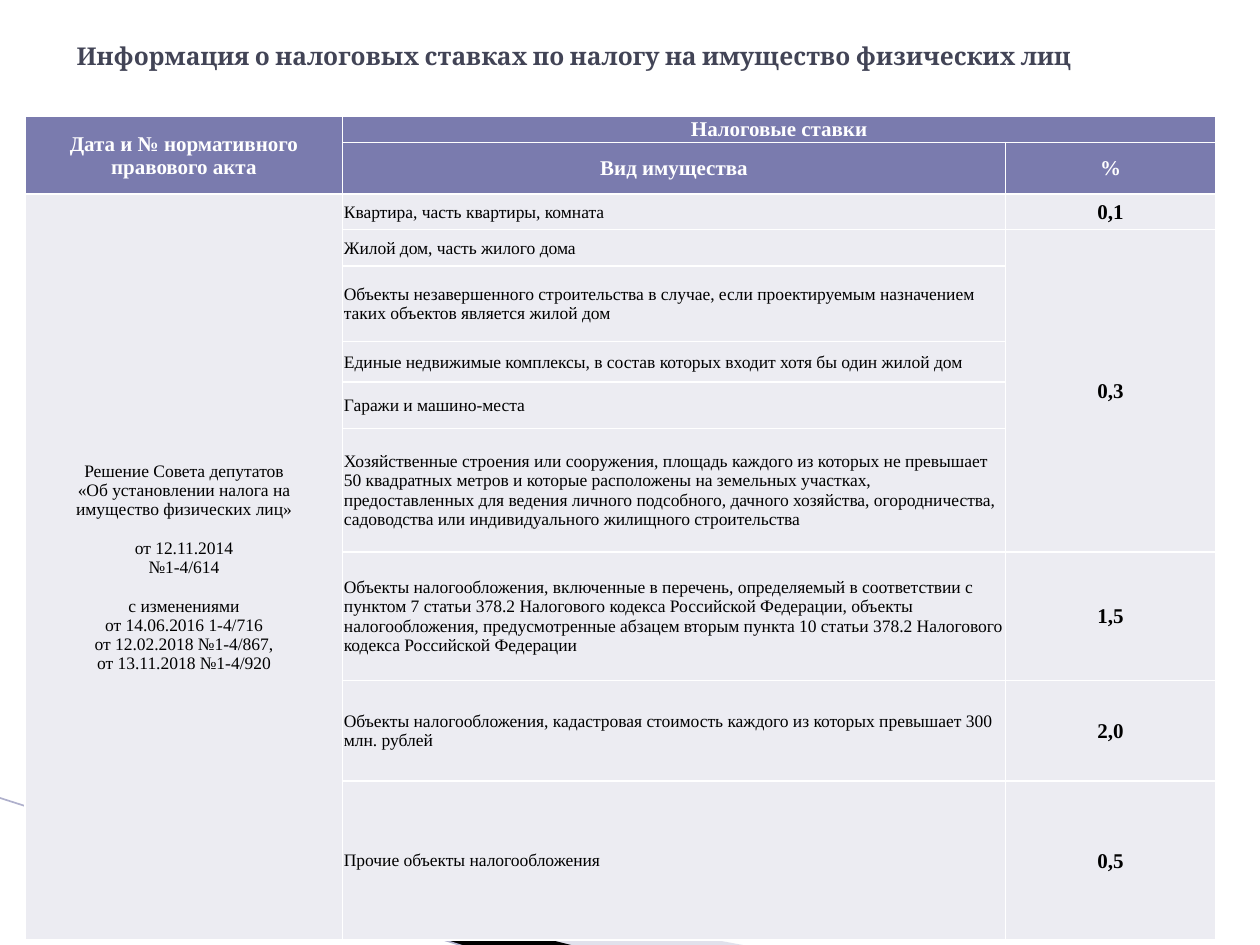
from lxml import etree
from pptx import Presentation
from pptx import util as u
from pptx.dml.color import RGBColor
from pptx.enum import shapes, text
from pptx.oxml import ns

COLS, ROWS = 100, 75  # grid over the slide


def rgb(hue):
    return RGBColor.from_string(hue)


def sub(node, tag, **attrs):
    return etree.SubElement(node, ns.qn(tag), attrs)


class Deck:
    serif, head = "Times New Roman", "Cambria"
    dark, band, pale = "424456", "7A7BAE", "ECECF2"

    def __init__(self):
        self.prs = Presentation()
        self.prs.slide_width, self.prs.slide_height = u.Inches(10), u.Inches(7.5)
        self.slide = self.prs.slides.add_slide(self.prs.slide_layouts[6])
        self.shapes = self.slide.shapes

    def x(self, col):
        return round(self.prs.slide_width * col / COLS)

    def y(self, row):
        return round(self.prs.slide_height * row / ROWS)

    def box(self, left, top, wide, high):
        return self.x(left), self.y(top), self.x(wide), self.y(high)

    def run(self, para, words, size, hue, bold=False, font=serif):
        run = para.add_run()
        run.text = words
        run.font.name, run.font.size, run.font.bold = font, u.Pt(size), bold
        run.font.color.rgb = rgb(hue)

    def title(self, words, *place):
        frame = self.shapes.add_textbox(*self.box(*place)).text_frame
        frame.word_wrap = True
        frame.vertical_anchor = text.MSO_ANCHOR.MIDDLE
        self.run(frame.paragraphs[0], words, 14, self.dark, True, self.head)

    def wedge(self, points, hue, alpha=None):
        first, *rest = [(self.x(c), self.y(r)) for c, r in points]
        pen = self.shapes.build_freeform(*first)
        pen.add_line_segments(rest)
        shape = pen.convert_to_shape()
        shape.shadow.inherit = False
        shape.line.fill.background()
        shape.fill.solid()
        shape.fill.fore_color.rgb = rgb(hue)
        if alpha:
            tone = shape.fill._xPr.find(".//" + ns.qn("a:srgbClr"))
            sub(tone, "a:alpha", val=str(alpha * 1000))

    def line(self, start, end, hue, width):
        line = self.shapes.add_connector(
            shapes.MSO_CONNECTOR.STRAIGHT, self.x(start[0]), self.y(start[1]),
            self.x(end[0]), self.y(end[1]))
        line.line.color.rgb, line.line.width = rgb(hue), u.Pt(width)
        sub(line._element.spPr, "a:effectLst")

    def table(self, place, wides, highs):
        grid = self.shapes.add_table(len(highs), len(wides), *self.box(*place)).table
        grid.first_row = grid.horz_banding = False
        for col, wide in zip(grid.columns, wides):
            col.width = self.x(wide)
        for row, high in zip(grid.rows, highs):
            row.height = self.y(high)
        for i in range(len(highs)):
            for cell in grid.rows[i].cells:
                self.dress(cell, self.band if i < 2 else self.pale)
        return grid

    def dress(self, cell, hue):
        props = cell._tc.get_or_add_tcPr()
        for side in "LRTB":
            edge = sub(props, "a:ln" + side, w=str(u.Pt(1)))
            sub(sub(edge, "a:solidFill"), "a:srgbClr", val="FFFFFF")
        cell.fill.solid()
        cell.fill.fore_color.rgb = rgb(hue)
        cell.vertical_anchor = text.MSO_ANCHOR.MIDDLE
        cell.margin_left = cell.margin_right = cell.margin_top = u.Inches(0.01)
        cell.margin_bottom = 0

    def cell(self, cell, groups, size, hue="000000", bold=False, mid=True):
        """Fill a cell; each group of lines after the first has a gap before it."""
        frame = cell.text_frame
        for g, group in enumerate(groups):
            for n, words in enumerate(group):
                para = frame.add_paragraph() if g or n else frame.paragraphs[0]
                para.alignment = text.PP_ALIGN.CENTER if mid else text.PP_ALIGN.LEFT
                if g and not n:
                    para.space_before = u.Pt(11)
                self.run(para, words, size, hue, bold)


ACT = [
    ["Решение Совета депутатов", "«Об установлении налога на",
     "имущество физических лиц»"],
    ["от 12.11.2014", "№1-4/614"],
    ["с изменениями", "от 14.06.2016 1-4/716", "от 12.02.2018 №1-4/867,",
     "от 13.11.2018 №1-4/920"],
]
# Kind of property, rate (None: same rate as above), row height
RATES = [
    ("Квартира, часть квартиры, комната", "0,1", 2.8),
    ("Жилой дом, часть жилого дома", "0,3", 2.9),
    ("Объекты незавершенного строительства в случае, если проектируемым "
     "назначением таких объектов является жилой дом", None, 6),
    ("Единые недвижимые комплексы, в состав которых входит хотя бы один жилой дом",
     None, 3.2),
    ("Гаражи и машино-места", None, 3.7),
    ("Хозяйственные строения или сооружения, площадь каждого из которых не "
     "превышает 50 квадратных метров и которые расположены на земельных участках, "
     "предоставленных для ведения личного подсобного, дачного хозяйства, "
     "огородничества, садоводства или индивидуального жилищного строительства",
     None, 9.8),
    ("Объекты налогообложения, включенные в перечень, определяемый в соответствии "
     "с пунктом 7 статьи 378.2 Налогового кодекса Российской Федерации, объекты "
     "налогообложения, предусмотренные абзацем вторым пункта 10 статьи 378.2 "
     "Налогового кодекса Российской Федерации", "1,5", 10.2),
    ("Объекты налогообложения, кадастровая стоимость каждого из которых превышает "
     "300 млн. рублей", "2,0", 8),
    ("Прочие объекты налогообложения", "0,5", 12.6),
]


def main():
    deck = Deck()

    # Corner wedges and line
    deck.wedge([(5.5, 65.1), (59.5, 75.1), (45.6, 75.1), (5.5, 65)], "B6B6D1", 40)
    deck.wedge([(5.3, 64.9), (45.7, 75.1), (37.2, 75.2), (5.4, 65)], "000000")
    deck.line((-0.1, 63.3), (37.1, 75.2), "AFB0CC", 0.95)

    deck.title("Информация о налоговых ставках по налогу на имущество физических лиц",
               5.1, 2.1, 90, 4.7)

    # Table and its merged cells
    highs = [1.8, 1.9] + [high for _, _, high in RATES]
    grid = deck.table((2, 9.2, 94.5, 63.4), [25.2, 52.6, 16.7], highs)
    for top, left, low, right in [(0, 0, 1, 0), (0, 1, 0, 2), (2, 0, 10, 0), (3, 2, 7, 2)]:
        grid.cell(top, left).merge(grid.cell(low, right))

    # Header
    for row, col, words in [(0, 0, "Дата и № нормативного правового акта"),
                            (0, 1, "Налоговые ставки"),
                            (1, 1, "Вид имущества"), (1, 2, "%")]:
        deck.cell(grid.cell(row, col), [[words]], 12, "FFFFFF", True)

    # Body
    deck.cell(grid.cell(2, 0), ACT, 10)
    for row, (kind, rate, _) in enumerate(RATES, 2):
        deck.cell(grid.cell(row, 1), [[kind]], 10, mid=False)
        if rate:
            deck.cell(grid.cell(row, 2), [[rate]], 12, bold=True)

    deck.prs.save("out.pptx")


if __name__ == "__main__":
    main()
